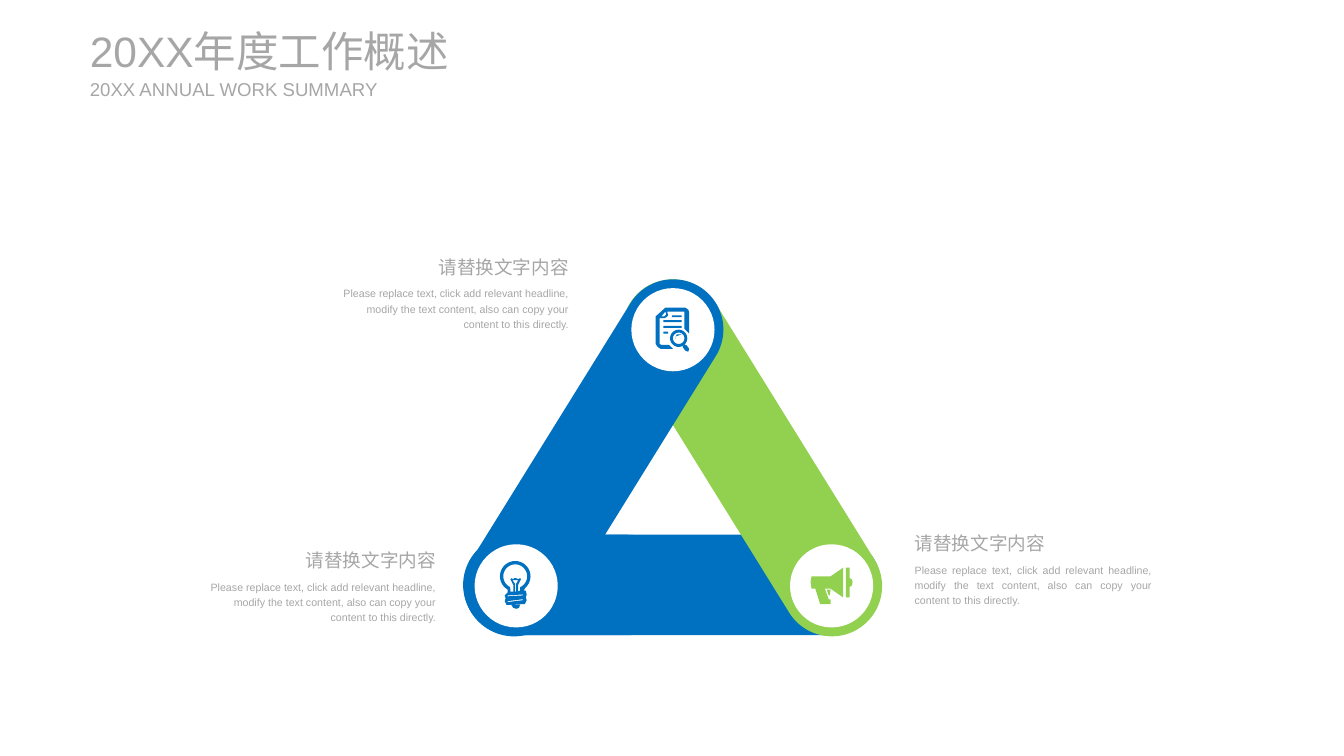
import math
import pptx
import pptx.dml.color
import pptx.enum.shapes
import pptx.enum.text
import pptx.util

COLUMNS, ROWS = 14.06, 7.91
BLUE, GREEN, WHITE, GREY = "0070C0", "92D050", "FFFFFF", "A6A6A6"
BAR, DISC = 1.05, 0.87
HEADLINE = "请替换文字内容"
DETAIL = ("Please replace text, click add relevant headline, modify the text content, "
          "also can copy your content to this directly.")
ALIGN = pptx.enum.text.PP_ALIGN
SHAPE = pptx.enum.shapes.MSO_SHAPE


def color(value):
    return pptx.dml.color.RGBColor.from_string(value)


def arc(x, y, radius, start=0, end=360, step=10):
    angles = [math.radians(angle) for angle in range(start, end + 1, step)]
    return [(x + radius * math.cos(a), y + radius * math.sin(a)) for a in angles]


def bar(x, y, width, height):
    return [(x, y), (x + width, y), (x + width, y + height), (x, y + height)]


class Canvas:
    """Draws styled elements on one slide, with lengths in square grid cells."""

    def __init__(self, deck):
        self.cell = deck.slide_width / COLUMNS
        self.font = {"name": "Arial"}
        self.shapes = deck.slides.add_slide(deck.slide_layouts[6]).shapes

    def place(self, *lengths):
        return [round(length * self.cell) for length in lengths]

    def paint(self, shape, fill):
        shape.shadow.inherit = False
        shape.fill.solid()
        shape.fill.fore_color.rgb = color(fill)
        shape.line.fill.background()

    def disc(self, center, fill):
        x, y = center
        area = self.place(x - DISC / 2, y - DISC / 2, DISC, DISC)
        self.paint(self.shapes.add_shape(SHAPE.OVAL, *area), fill)

    def capsule(self, center, length, fill, rotation=0):
        x, y = center
        area = self.place(x - length / 2, y - BAR / 2, length, BAR)
        shape = self.shapes.add_shape(SHAPE.ROUNDED_RECTANGLE, *area)
        shape.adjustments[0] = 0.5
        shape.rotation = rotation
        self.paint(shape, fill)

    def icon(self, contours, fill):
        outlines = [[self.place(*point) for point in contour] for contour in contours]
        builder = self.shapes.build_freeform(*outlines[0][0], scale=1.0)
        for index, outline in enumerate(outlines):
            if index:
                builder.move_to(*outline[0])
            builder.add_line_segments(outline[1:], close=True)
        self.paint(builder.convert_to_shape(), fill)

    def text(self, area, words, size, frame_format=None, **para_format):
        box = self.shapes.add_textbox(*self.place(*area))
        for name, value in {"word_wrap": True, **(frame_format or {})}.items():
            setattr(box.text_frame, name, value)
        para = box.text_frame.paragraphs[0]
        for name, value in para_format.items():
            setattr(para, name, value)
        span = para.add_run()
        span.text = words
        for name, value in {**self.font, "size": pptx.util.Pt(size)}.items():
            setattr(span.font, name, value)
        span.font.color.rgb = color(GREY)

    def caption(self, left, top, width, headline_align, detail_align):
        for offset, height, words, size, align in (
                (0, 0.36, HEADLINE, 14, headline_align),
                (0.35, 0.57, DETAIL, 8, detail_align)):
            self.text((left, top + offset, width, height), words, size,
                      alignment=align, line_spacing=1.2)


REPORT = [
    [(6.96, 3.22), (7.17, 3.22), (7.2, 3.24), (7.21, 3.27), (7.21, 3.49), (7.16, 3.44),
     (7.16, 3.26), (6.98, 3.26), (6.99, 3.3), (6.97, 3.32), (6.95, 3.33), (6.9, 3.33),
     (6.9, 3.6), (6.92, 3.61), (7, 3.61), (7.04, 3.65), (6.91, 3.65), (6.88, 3.63),
     (6.86, 3.6), (6.86, 3.31)],
    [(6.96, 3.26), (6.92, 3.31), (6.95, 3.31), (6.97, 3.29)],
    bar(7.03, 3.3, 0.1, 0.02),
    bar(6.94, 3.35, 0.19, 0.02),
    bar(6.94, 3.41, 0.19, 0.02),
    bar(6.94, 3.47, 0.05, 0.02),
    arc(7.1, 3.54, 0.09),
    arc(7.1, 3.54, 0.06),
    [(7.06, 3.55), (7.07, 3.52), (7.13, 3.5), (7.08, 3.5)],
    [(7.14, 3.63), (7.17, 3.67), (7.2, 3.68), (7.21, 3.65), (7.18, 3.61), (7.16, 3.61)],
]
BULB = [
    arc(5.39, 6.03, 0.16, 120, 410) + [
        (5.48, 6.18), (5.5, 6.18), (5.51, 6.22), (5.5, 6.25), (5.51, 6.28), (5.49, 6.32),
        (5.3, 6.33), (5.28, 6.29), (5.29, 6.26), (5.28, 6.23), (5.31, 6.2)],
    arc(5.39, 6.03, 0.125, 115, 425) + [
        (5.44, 6.18), (5.42, 6.19), (5.42, 6.12), (5.45, 6.06), (5.44, 6.05), (5.42, 6.06),
        (5.4, 6.05), (5.38, 6.05), (5.37, 6.06), (5.35, 6.05), (5.34, 6.06), (5.37, 6.12),
        (5.37, 6.19), (5.34, 6.19)],
    [(5.42, 6.07), (5.36, 6.07), (5.39, 6.11), (5.39, 6.19), (5.4, 6.19), (5.4, 6.11)],
    [(5.31, 6.23), (5.47, 6.22), (5.47, 6.23), (5.31, 6.24)],
    [(5.31, 6.29), (5.47, 6.27), (5.47, 6.28), (5.31, 6.3)],
    [(5.44, 6.33), (5.35, 6.33), (5.37, 6.36), (5.4, 6.37), (5.43, 6.36)],
]
MEGAPHONE = [
    [(8.49, 6.03), (8.69, 6.03), (8.82, 5.94), (8.82, 6.25), (8.69, 6.16), (8.63, 6.16),
     (8.67, 6.27), (8.69, 6.27), (8.69, 6.32), (8.58, 6.32), (8.53, 6.16), (8.49, 6.16),
     (8.48, 6.09)],
    [(8.85, 5.94), (8.89, 5.94), (8.89, 6.05), (8.91, 6.06), (8.92, 6.09), (8.91, 6.13),
     (8.89, 6.14), (8.89, 6.25), (8.85, 6.25)],
    [(8.69, 6.17), (8.65, 6.17), (8.67, 6.23), (8.68, 6.23)],
]


def main():
    deck = pptx.Presentation()
    deck.slide_width = pptx.util.Inches(COLUMNS)
    deck.slide_height = pptx.util.Inches(ROWS)
    canvas = Canvas(deck)

    canvas.capsule((7.04, 6.12), 4.36, BLUE)
    canvas.capsule((7.87, 4.79), 4.21, GREEN, 58.2)
    canvas.capsule((6.21, 4.79), 4.21, BLUE, -58.2)
    canvas.capsule((5.97, 6.12), 2.25, BLUE)

    corners = {"top": (7.04, 3.45), "left": (5.4, 6.13), "right": (8.7, 6.13)}
    for center in corners.values():
        canvas.disc(center, WHITE)
    for contours, fill in ((REPORT, BLUE), (BULB, BLUE), (MEGAPHONE, GREEN)):
        canvas.icon(contours, fill)

    canvas.caption(9.47, 5.47, 2.68, ALIGN.LEFT, ALIGN.JUSTIFY)
    canvas.caption(3.46, 2.58, 2.59, ALIGN.RIGHT, ALIGN.RIGHT)
    canvas.caption(2.07, 5.65, 2.59, ALIGN.RIGHT, ALIGN.RIGHT)

    sides = ("left", "right", "top", "bottom")
    flush = {f"margin_{side}": 0 for side in sides}
    flush["vertical_anchor"] = pptx.enum.text.MSO_ANCHOR.MIDDLE
    canvas.text((0.94, 0.26, 4.32, 0.54), "20XX年度工作概述", 32, flush)
    canvas.text((0.94, 0.81, 3.07, 0.24), "20XX ANNUAL WORK SUMMARY", 14, flush)
    deck.save("out.pptx")


if __name__ == "__main__":
    main()
